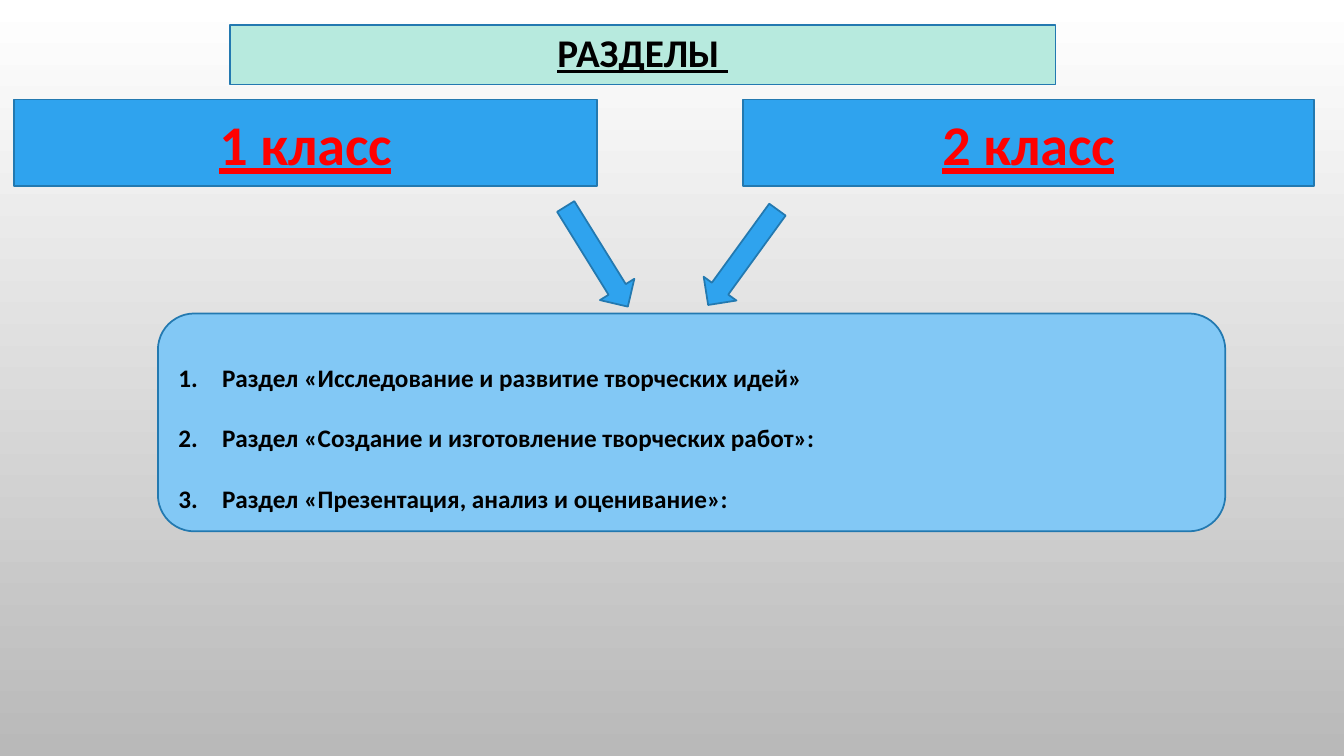
from lxml import etree
from pptx import Presentation
from pptx.dml.color import RGBColor
from pptx.enum.shapes import MSO_SHAPE
from pptx.enum.text import MSO_ANCHOR, MSO_AUTO_SIZE, PP_ALIGN
from pptx.oxml.ns import qn
from pptx.util import Cm, Pt

RECT = MSO_SHAPE.RECTANGLE
ROUND_RECT = MSO_SHAPE.ROUNDED_RECTANGLE
DOWN_ARROW = MSO_SHAPE.DOWN_ARROW
MIDDLE = MSO_ANCHOR.MIDDLE
NO_AUTOFIT = MSO_AUTO_SIZE.NONE
LEFT, CENTER = PP_ALIGN.LEFT, PP_ALIGN.CENTER

WHITE = RGBColor(0xFF, 0xFF, 0xFF)
GRAY = RGBColor(0xB9, 0xB9, 0xB9)
BLACK = RGBColor(0x00, 0x00, 0x00)
RED = RGBColor(0xFF, 0x00, 0x00)
MINT = RGBColor(0xB7, 0xEA, 0xDE)
BLUE = RGBColor(0x2F, 0xA3, 0xEE)
LIGHT_BLUE = RGBColor(0x82, 0xC8, 0xF5)
OUTLINE = RGBColor(0x23, 0x79, 0xB0)

SECTIONS = [
    "Раздел «Исследование и развитие творческих идей»",
    "Раздел «Создание и изготовление творческих работ»:",
    "Раздел «Презентация, анализ и оценивание»:",
]


class SlideBuilder:
    font = "Calibri"
    line_width = Pt(1.25)
    list_indent = Cm(1.1)

    def __init__(self, slide):
        self.slide = slide

    def background(self, top, bottom):
        fill = self.slide.background.fill
        fill.gradient()
        fill.gradient_angle = 270
        for stop, position, color in zip(fill.gradient_stops, (0, 1), (top, bottom)):
            stop.position = position
            stop.color.rgb = color

    def paint(self, sp, fill):
        sp.fill.solid()
        sp.fill.fore_color.rgb = fill
        sp.line.color.rgb = OUTLINE
        sp.line.width = self.line_width

    def shape(self, kind, left, top, width, height, fill):
        sp = self.slide.shapes.add_shape(
            kind, Cm(left), Cm(top), Cm(width), Cm(height))
        sp.shadow.inherit = False
        self.paint(sp, fill)
        return sp

    def text_frame(self, sp):
        tf = sp.text_frame
        tf.word_wrap = True
        tf.auto_size = NO_AUTOFIT
        tf.vertical_anchor = MIDDLE
        return tf

    def run(self, p, text, size, color, underline=False):
        r = p.add_run()
        r.text = text
        r.font.name = self.font
        r.font.size = Pt(size)
        r.font.bold = True
        r.font.underline = underline
        r.font.color.rgb = color

    def title(self, text, left, top, width, height):
        sp = self.slide.shapes.title
        sp.left, sp.top = Cm(left), Cm(top)
        sp.width, sp.height = Cm(width), Cm(height)
        self.paint(sp, MINT)
        p = self.text_frame(sp).paragraphs[0]
        p.alignment = CENTER
        p.line_spacing = 0.9
        self.run(p, text, 28, BLACK, underline=True)

    def class_box(self, text, left, width):
        sp = self.shape(RECT, left, 2.51, width, 2.18, BLUE)
        p = self.text_frame(sp).paragraphs[0]
        p.alignment = CENTER
        self.run(p, text, 40, RED, underline=True)

    def arrow(self, left, top, rotation):
        self.shape(DOWN_ARROW, left, top, 1.02, 2.97, BLUE).rotation = rotation

    def numbered_box(self, items, left, top, width, height):
        sp = self.shape(ROUND_RECT, left, top, width, height, LIGHT_BLUE)
        tf = self.text_frame(sp)
        for i, item in enumerate(items):
            p = tf.add_paragraph() if i else tf.paragraphs[0]
            pPr = p._p.get_or_add_pPr()
            pPr.set("marL", str(self.list_indent))
            pPr.set("indent", str(-self.list_indent))
            etree.SubElement(pPr, qn("a:buAutoNum"), type="arabicPeriod")
            p.alignment = LEFT
            p.line_spacing = 2.0
            self.run(p, item, 18, BLACK)


def main():
    prs = Presentation()
    prs.slide_width, prs.slide_height = Cm(33.87), Cm(19.05)
    title_only = prs.slide_layouts[5]
    s = SlideBuilder(prs.slides.add_slide(title_only))

    s.background(WHITE, GRAY)
    s.title("РАЗДЕЛЫ ", 5.8, 0.63, 20.8, 1.5)
    s.class_box("1 класс", 0.35, 14.7)
    s.class_box("2 класс", 18.72, 14.4)
    s.arrow(14.53, 4.98, 328.2)
    s.arrow(18.21, 5, 36)
    s.numbered_box(SECTIONS, 3.98, 7.9, 26.9, 5.49)

    prs.save("out.pptx")


if __name__ == "__main__":
    main()
